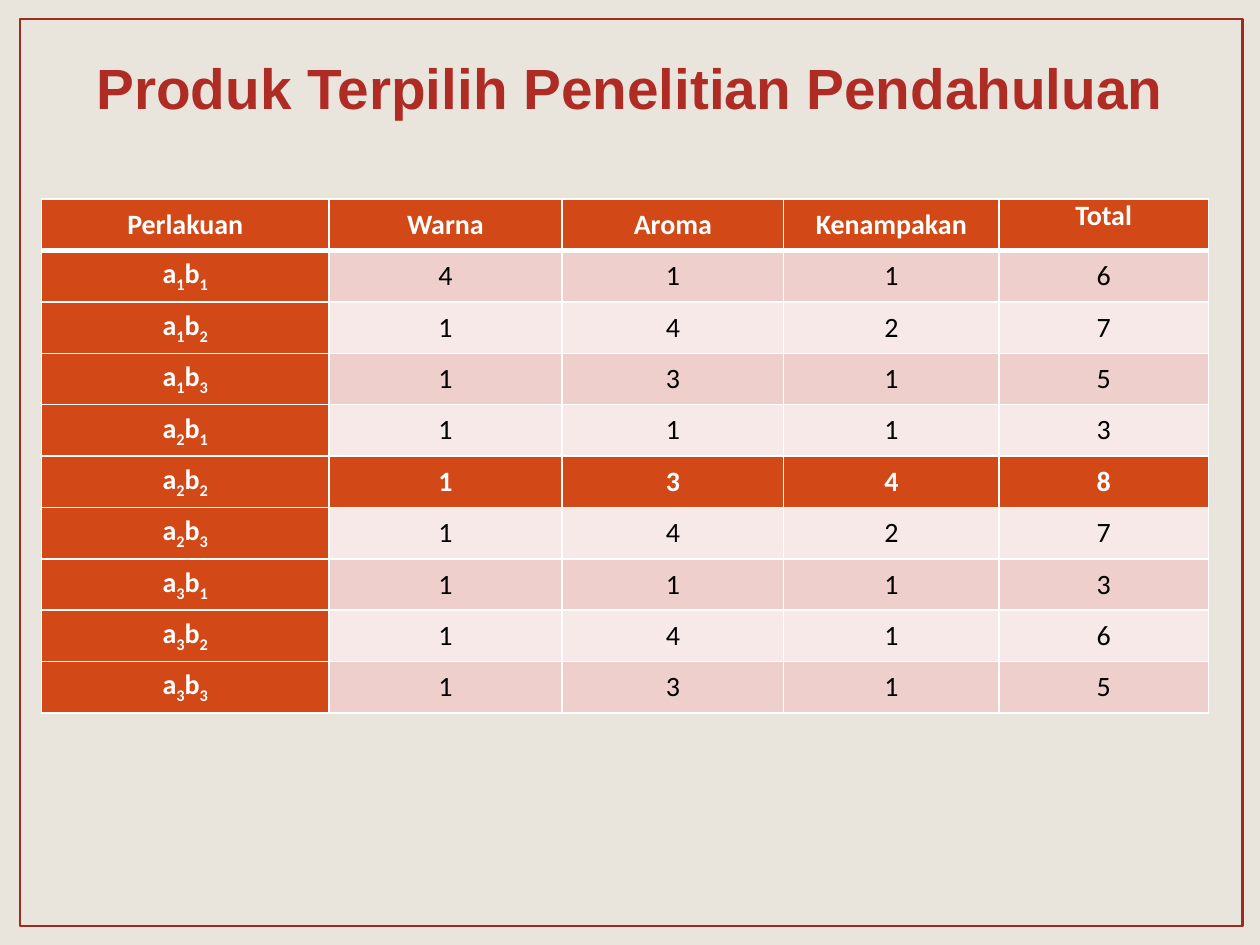
from lxml import etree
from pptx import Presentation
from pptx import util as u
from pptx.dml.color import RGBColor
from pptx.enum import shapes, text
from pptx.oxml import ns

CREAM = RGBColor(0xE9, 0xE5, 0xDC)
MAROON = RGBColor(0x9B, 0x2D, 0x1F)
RED = RGBColor(0xAF, 0x2C, 0x25)
ORANGE = RGBColor(0xD3, 0x48, 0x17)
PINK = RGBColor(0xEF, 0xCF, 0xCC)
PALE = RGBColor(0xF7, 0xE9, 0xE8)
WHITE = RGBColor(0xFF, 0xFF, 0xFF)
BLACK = RGBColor(0, 0, 0)

HEADINGS = ["Perlakuan", "Warna", "Aroma", "Kenampakan", "Total"]
COLUMN_WIDTHS = [2.28, 1.85, 1.76, 1.71, 1.66]
SCORES = {
    "a1b1": (4, 1, 1), "a1b2": (1, 4, 2), "a1b3": (1, 3, 1),
    "a2b1": (1, 1, 1), "a2b2": (1, 3, 4), "a2b3": (1, 4, 2),
    "a3b1": (1, 1, 1), "a3b2": (1, 4, 1), "a3b3": (1, 3, 1),
}
SELECTED = "a2b2"


class SlideBuilder:
    title_font = "Arial"
    table_font = "Calibri"

    def __init__(self, page):
        self.page = page
        fill = page.background.fill
        fill.solid()
        fill.fore_color.rgb = CREAM

    def frame(self, left, top, width, height):
        box = self.page.shapes.add_shape(
            shapes.MSO_SHAPE.RECTANGLE, *map(u.Inches, (left, top, width, height)))
        box.shadow.inherit = False
        box.fill.background()
        box.line.color.rgb = MAROON
        box.line.width = u.Pt(1.5)

    def title(self, words, left, top, width, height):
        box = self.page.shapes.title
        box.left, box.top, box.width, box.height = map(
            u.Inches, (left, top, width, height))
        box.text_frame.text = words
        box.text_frame.vertical_anchor = text.MSO_ANCHOR.MIDDLE
        para = box.text_frame.paragraphs[0]
        para.alignment = text.PP_ALIGN.CENTER
        self.style(para.font, self.title_font, 32.4, RED, True)

    def style(self, font, name, size, color, bold):
        font.name, font.size, font.bold = name, u.Pt(size), bold
        font.color.rgb = color

    def borders(self, cell, top=1, bottom=1):
        properties = cell._tc.get_or_add_tcPr()
        for side, width in zip("LRTB", (1, 1, top, bottom)):
            line = etree.SubElement(
                properties, ns.qn(f"a:ln{side}"), w=str(u.Pt(width)))
            fill = etree.SubElement(line, ns.qn("a:solidFill"))
            etree.SubElement(fill, ns.qn("a:srgbClr"), val=str(WHITE))

    def cell(self, cell, words, fill, strong, subscripts=False):
        cell.fill.solid()
        cell.fill.fore_color.rgb = fill
        cell.vertical_anchor = text.MSO_ANCHOR.MIDDLE
        cell.margin_left = cell.margin_right = u.Inches(0.07)
        cell.margin_top = cell.margin_bottom = 0
        para = cell.text_frame.paragraphs[0]
        para.alignment = text.PP_ALIGN.CENTER
        para.space_before = para.space_after = u.Pt(2)
        self.style(para.font, self.table_font, 16,
                   WHITE if strong else BLACK, strong)
        for part in words if subscripts else [words]:
            span = para.add_run()
            span.text = part
            if subscripts and part.isdigit():
                span.font._element.set("baseline", "-25000")

    def score_table(self, left, top, height):
        row_count = len(SCORES) + 1
        table = self.page.shapes.add_table(
            row_count, len(HEADINGS), u.Inches(left), u.Inches(top),
            u.Inches(sum(COLUMN_WIDTHS)), u.Inches(height)).table
        table.first_row = table.horz_banding = False
        for column, width in zip(table.columns, COLUMN_WIDTHS):
            column.width = u.Inches(width)
        for row in table.rows:
            row.height = u.Inches(height / row_count)

        for c, heading in enumerate(HEADINGS):
            header = table.cell(0, c)
            self.borders(header, bottom=3)
            self.cell(header, heading, ORANGE, True)
        table.cell(0, len(HEADINGS) - 1).vertical_anchor = text.MSO_ANCHOR.TOP

        for r, (treatment, scores) in enumerate(SCORES.items(), 1):
            band = PINK if r % 2 else PALE
            for c, value in enumerate((treatment, *scores, sum(scores))):
                strong = c == 0 or treatment == SELECTED
                cell = table.cell(r, c)
                self.borders(cell, top=3 if r == 1 else 1)
                self.cell(cell, str(value), ORANGE if strong else band,
                          strong, subscripts=c == 0)


def main():
    deck = Presentation()
    deck.slide_width, deck.slide_height = u.Inches(10), u.Inches(7.5)
    builder = SlideBuilder(deck.slides.add_slide(deck.slide_layouts[5]))
    builder.frame(0.16, 0.15, 9.7, 7.2)
    builder.title("Produk Terpilih Penelitian Pendahuluan", 0.5, 0.3, 9, 0.78)
    builder.score_table(0.33, 1.58, 4.08)
    deck.save("out.pptx")


if __name__ == "__main__":
    main()
